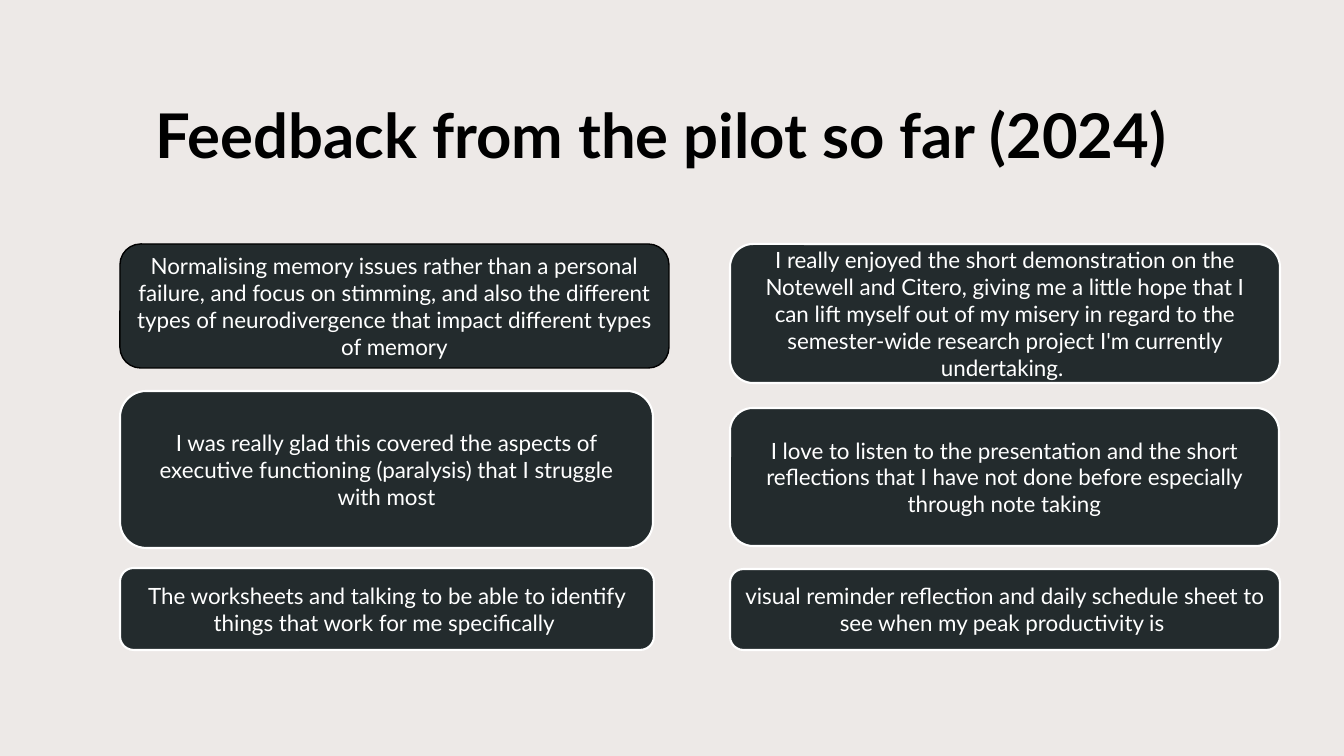
from dataclasses import dataclass

from pptx import Presentation
from pptx import util as u
from pptx.dml.color import RGBColor
from pptx.enum import shapes, text

SCALE = u.Inches(7.5) / 756
FONT = "Lato"
DARK = "232B2D"
WHITE = "FFFFFF"
BLACK = "000000"
PAPER = "EDE9E7"


@dataclass
class Quote:
    left: int
    top: int
    width: int
    height: int
    words: str
    edge: str = WHITE
    weight: float = 1.5


QUOTES = [
    Quote(120, 244, 549, 124,
          "Normalising memory issues rather than a personal failure, and focus on "
          "stimming, and also the different types of neurodivergence that impact "
          "different types of memory", BLACK, 1),
    Quote(120, 391, 533, 157,
          "I was really glad this covered the aspects of executive functioning "
          "(paralysis) that I struggle with most"),
    Quote(120, 568, 534, 82,
          "The worksheets and talking to be able to identify things that work for "
          "me specifically "),
    Quote(730, 244, 550, 139,
          "I really enjoyed the short demonstration on the Notewell and Citero, "
          "giving me a little hope that I can lift myself out of my misery in regard "
          "to the semester-wide research project I'm currently undertaking. "),
    Quote(730, 408, 549, 138,
          "I love to listen to the presentation and the short reflections that I "
          "have not done before especially through note taking"),
    Quote(730, 569, 550, 81,
          "visual reminder reflection and daily schedule sheet to see when my peak "
          "productivity is "),
]


def px(count: int) -> int:
    return round(count * SCALE)


def paint(value: str) -> RGBColor:
    return RGBColor.from_string(value)


def write(frame, words: str, size: int, tint: str, anchor):
    frame.word_wrap = True
    frame.vertical_anchor = anchor
    para = frame.paragraphs[0]
    para.text = words
    para.alignment = text.PP_ALIGN.CENTER
    para.font.name = FONT
    para.font.size = u.Pt(size)
    para.font.color.rgb = paint(tint)
    return para


def draw_title(slide, words: str) -> None:
    box = slide.shapes.add_textbox(px(102), px(50), px(1134), px(127))
    para = write(box.text_frame, words, 44, BLACK, text.MSO_ANCHOR.BOTTOM)
    para.font.bold = True
    para.line_spacing = 0.9


def draw_quote(slide, quote: Quote) -> None:
    card = slide.shapes.add_shape(
        shapes.MSO_SHAPE.ROUNDED_RECTANGLE,
        px(quote.left), px(quote.top), px(quote.width), px(quote.height))
    card.shadow.inherit = False
    card.fill.solid()
    card.fill.fore_color.rgb = paint(DARK)
    card.line.color.rgb = paint(quote.edge)
    card.line.width = u.Pt(quote.weight)
    write(card.text_frame, quote.words, 16, WHITE, text.MSO_ANCHOR.MIDDLE)


def main() -> None:
    deck = Presentation()
    deck.slide_width = px(1344)
    deck.slide_height = px(756)
    slide = deck.slides.add_slide(deck.slide_layouts[6])
    slide.background.fill.solid()
    slide.background.fill.fore_color.rgb = paint(PAPER)
    draw_title(slide, "Feedback from the pilot so far (2024) ")
    for quote in QUOTES:
        draw_quote(slide, quote)
    deck.save("out.pptx")


if __name__ == "__main__":
    main()
